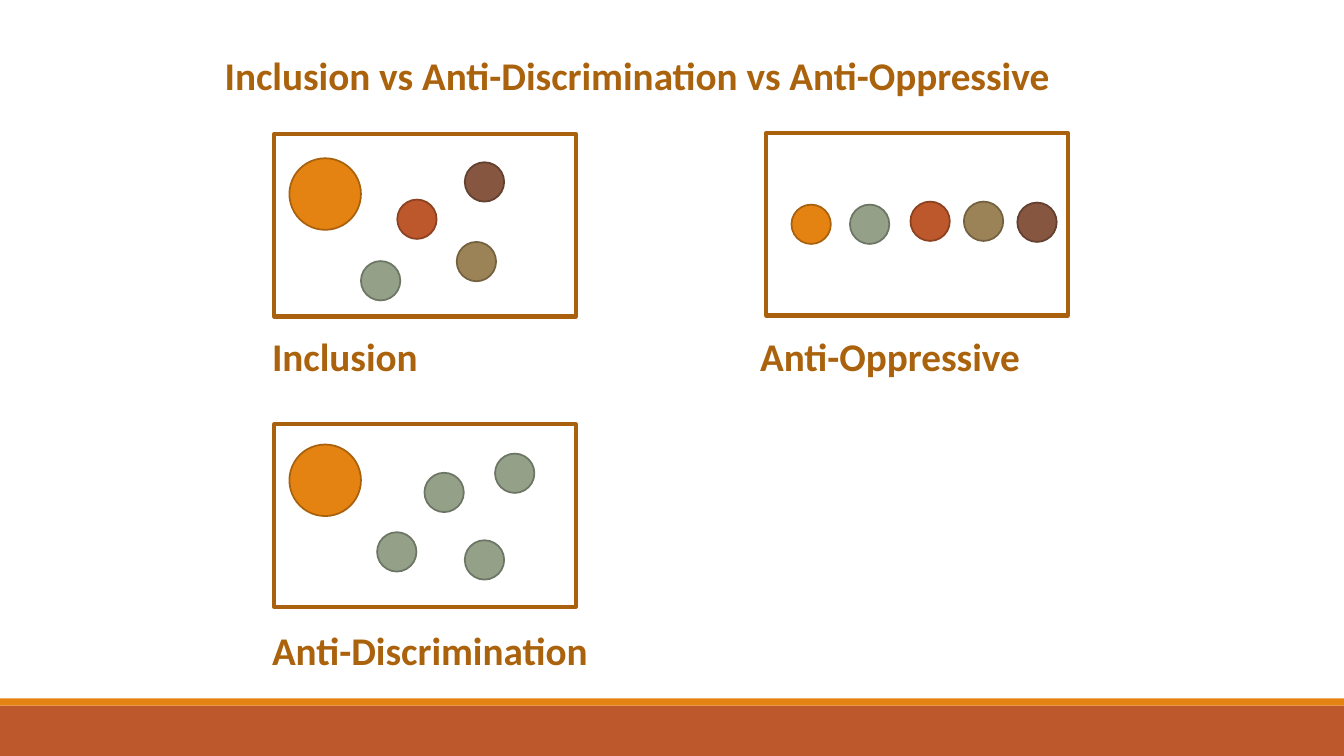
from dataclasses import dataclass

from pptx import Presentation
from pptx.dml.color import RGBColor
from pptx.enum.shapes import MSO_SHAPE as Shape
from pptx.enum.text import MSO_AUTO_SIZE as AutoSize
from pptx.util import Emu, Inches, Pt

# Grid: square cells, 75 rows to the slide's height
SLIDE_WIDTH, SLIDE_HEIGHT = Inches(13.33), Inches(7.5)
ROWS = 75
CELL = SLIDE_HEIGHT / ROWS
COLUMNS = SLIDE_WIDTH / CELL

# Colours
ORANGE = RGBColor(0xE4, 0x83, 0x12)
RUST = RGBColor(0xBD, 0x58, 0x2C)
SAGE = RGBColor(0x94, 0xA0, 0x88)
TAN = RGBColor(0x9B, 0x83, 0x57)
BROWN = RGBColor(0x86, 0x56, 0x40)
FRAME = RGBColor(0xA9, 0x61, 0x0D)
TEXT = RGBColor(0xAB, 0x62, 0x0D)
OUTLINES = {
    ORANGE: FRAME,
    RUST: RGBColor(0x8C, 0x41, 0x21),
    SAGE: RGBColor(0x6D, 0x76, 0x65),
    TAN: RGBColor(0x73, 0x61, 0x40),
    BROWN: RGBColor(0x63, 0x40, 0x2F),
}

# Sizes in cells
PANEL_WIDTH, PANEL_HEIGHT = 29.9, 18.1
SMALL, LARGE = 3.9, 7.1
LABEL_HEIGHT = 7.3


@dataclass(frozen=True)
class Circle:
    """A person, placed from the panel's top left corner."""
    column: float
    row: float
    fill: RGBColor
    size: float = SMALL


@dataclass(frozen=True)
class Label:
    text: str
    column: float
    row: float
    width: float


@dataclass(frozen=True)
class Panel:
    column: float
    row: float
    label: Label
    circles: tuple[Circle, ...]


TITLE = Label("Inclusion vs Anti-Discrimination vs Anti-Oppressive", 21.3, 2.3, 90.6)

PANELS = (
    Panel(27.2, 13.3, Label("Inclusion", 26, 30.1, 17.3), (
        Circle(1.5, 2.4, ORANGE, LARGE),
        Circle(8.6, 12.6, SAGE),
        Circle(12.2, 6.5, RUST),
        Circle(18.9, 2.8, BROWN),
        Circle(18.1, 10.7, TAN),
    )),
    Panel(27.2, 42.1, Label("Anti-Discrimination", 26, 59.3, 34.6), (
        Circle(1.5, 2, ORANGE, LARGE),
        Circle(10.2, 10.7, SAGE),
        Circle(14.9, 4.8, SAGE),
        Circle(18.9, 11.5, SAGE),
        Circle(21.9, 2.9, SAGE),
    )),
    Panel(76, 13.2, Label("Anti-Oppressive", 74.4, 30.1, 28.5), (
        Circle(2.5, 7.1, ORANGE),
        Circle(8.3, 7.1, SAGE),
        Circle(14.3, 6.8, RUST),
        Circle(19.6, 6.8, TAN),
        Circle(24.9, 6.9, BROWN),
    )),
)


def cells(count: float) -> Emu:
    return Emu(round(count * CELL))


def draw_shape(slide, kind: Shape, column: float, row: float, width: float, height: float,
               fill: RGBColor | None = None, line: RGBColor | None = None,
               line_width: float = 1.25) -> None:
    shape = slide.shapes.add_shape(kind, *map(cells, (column, row, width, height)))
    shape.shadow.inherit = False
    if fill is None:
        shape.fill.background()
    else:
        shape.fill.solid()
        shape.fill.fore_color.rgb = fill
    if line is None:
        shape.line.fill.background()
    else:
        shape.line.color.rgb = line
        shape.line.width = Pt(line_width)


def draw_label(slide, label: Label) -> None:
    box = slide.shapes.add_textbox(
        *map(cells, (label.column, label.row, label.width, LABEL_HEIGHT)))
    text_frame = box.text_frame
    text_frame.word_wrap = True
    text_frame.auto_size = AutoSize.SHAPE_TO_FIT_TEXT
    text_frame.text = label.text
    paragraph = text_frame.paragraphs[0]
    paragraph.line_spacing = 1.5
    font = paragraph.runs[0].font
    font.name, font.size, font.bold = "Calibri", Pt(28), True
    font.color.rgb = TEXT


def draw_panel(slide, panel: Panel) -> None:
    draw_shape(slide, Shape.RECTANGLE, panel.column, panel.row,
               PANEL_WIDTH, PANEL_HEIGHT, line=FRAME, line_width=3)
    for circle in panel.circles:
        draw_shape(slide, Shape.OVAL, panel.column + circle.column, panel.row + circle.row,
                   circle.size, circle.size, circle.fill, OUTLINES[circle.fill])
    draw_label(slide, panel.label)


def main() -> None:
    presentation = Presentation()
    presentation.slide_width, presentation.slide_height = SLIDE_WIDTH, SLIDE_HEIGHT
    slide = presentation.slides.add_slide(presentation.slide_layouts[6])

    # Footer bands
    draw_shape(slide, Shape.RECTANGLE, 0, 70, COLUMNS, 5, RUST)
    draw_shape(slide, Shape.RECTANGLE, 0, 69.3, COLUMNS, 0.7, ORANGE)

    # Title and the three approaches
    draw_label(slide, TITLE)
    for panel in PANELS:
        draw_panel(slide, panel)

    presentation.save("out.pptx")


if __name__ == "__main__":
    main()
